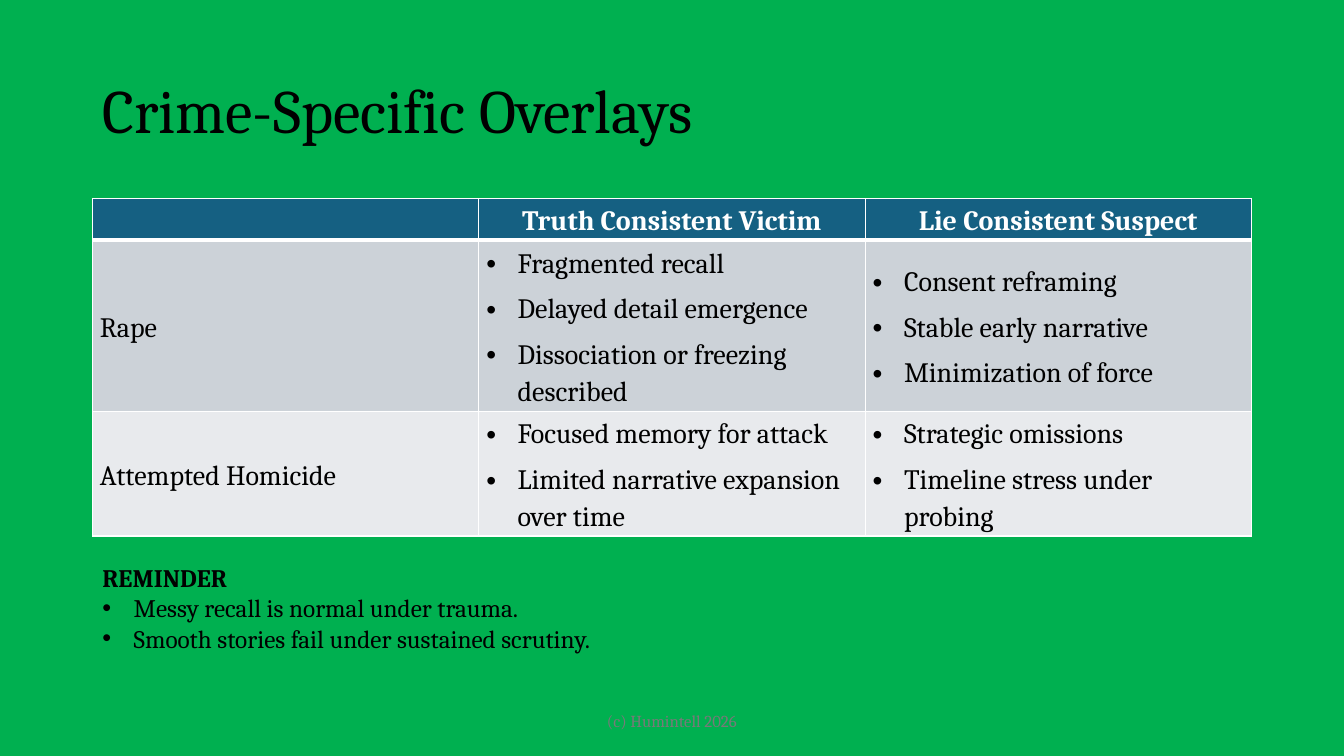
from lxml.etree import SubElement
from pptx import Presentation
from pptx.dml.color import RGBColor
from pptx.enum.text import MSO_ANCHOR, PP_ALIGN
from pptx.oxml import parse_xml
from pptx.oxml.ns import nsdecls, qn
from pptx.util import Cm, Pt

TITLE = "Crime-Specific Overlays"
HEADINGS = ["", "Truth Consistent Victim", "Lie Consistent Suspect"]
CRIMES = [
    ("Rape",
     ["Fragmented recall", "Delayed detail emergence", "Dissociation or freezing described"],
     ["Consent reframing", "Stable early narrative", "Minimization of force"]),
    ("Attempted Homicide",
     ["Focused memory for attack", "Limited narrative expansion over time"],
     ["Strategic omissions", "Timeline stress under probing"]),
]
REMINDER = "REMINDER"
REMINDERS = ["Messy recall is normal under trauma.", "Smooth stories fail under sustained scrutiny."]
COPYRIGHT = "(c) Humintell 2026"

GREEN = RGBColor(0x00, 0xB0, 0x50)
TEAL = RGBColor(0x15, 0x60, 0x82)
BANDS = [RGBColor(0xCC, 0xD2, 0xD8), RGBColor(0xE8, 0xEA, 0xED)]
BLACK = RGBColor(0, 0, 0)
WHITE = RGBColor(0xFF, 0xFF, 0xFF)
GREY = RGBColor(0x79, 0x79, 0x79)

LEFT, WIDTH = Cm(2.33), Cm(29.21)
ROW_HEIGHTS = [Cm(1.05), Cm(4.15), Cm(3.02)]
INDENT = Cm(0.79)


def write(frame, text, size=20, color=BLACK, bold=False, align=PP_ALIGN.LEFT,
          bullet=False, spacing=None, after=None, more=False):
    paragraph = frame.add_paragraph() if more else frame.paragraphs[0]
    paragraph.alignment = align
    paragraph.line_spacing = spacing
    paragraph.space_after = after
    if bullet:
        properties = paragraph._p.get_or_add_pPr()
        properties.set("marL", str(INDENT))
        properties.set("indent", str(-INDENT))
        SubElement(properties, qn("a:buFont")).set("typeface", "Arial")
        SubElement(properties, qn("a:buChar")).set("char", "•")
    if text:
        font = paragraph.add_run().font
        paragraph.runs[0].text = text
    else:
        font = paragraph.font
    font.name, font.size, font.bold = "Cambria", Pt(size), bold
    font.color.rgb = color


def add_frame(slide, left, top, width, height, anchor=MSO_ANCHOR.MIDDLE):
    frame = slide.shapes.add_textbox(left, top, width, height).text_frame
    frame.word_wrap = True
    frame.vertical_anchor = anchor
    return frame


def style_cell(cell, fill, top=1, bottom=1):
    cell.fill.solid()
    cell.fill.fore_color.rgb = fill
    cell.vertical_anchor = MSO_ANCHOR.MIDDLE
    cell.margin_left = cell.margin_right = Cm(0.19)
    cell.margin_top = cell.margin_bottom = 0
    edges = {"L": 1, "R": 1, "T": top, "B": bottom}
    for place, (side, width) in enumerate(edges.items()):
        cell._tc.get_or_add_tcPr().insert(place, parse_xml(
            f'<a:ln{side} {nsdecls("a")} w="{Pt(width)}"><a:solidFill>'
            f'<a:srgbClr val="{WHITE}"/></a:solidFill></a:ln{side}>'))


def add_overlays(slide):
    overlays = slide.shapes.add_table(
        len(CRIMES) + 1, len(HEADINGS), LEFT, Cm(5), WIDTH, sum(ROW_HEIGHTS)).table
    for row, height in zip(overlays.rows, ROW_HEIGHTS):
        row.height = height
    spaced = {"spacing": 1.15, "after": Pt(6)}
    for column, heading in enumerate(HEADINGS):
        cell = overlays.cell(0, column)
        style_cell(cell, TEAL, bottom=3)
        write(cell.text_frame, heading, color=WHITE, bold=True, align=PP_ALIGN.CENTER, **spaced)
    for row, (crime, *signs) in enumerate(CRIMES, 1):
        for column, lines in enumerate([[crime], *signs]):
            cell = overlays.cell(row, column)
            style_cell(cell, BANDS[row - 1], top=3 if row == 1 else 1)
            for place, line in enumerate(lines):
                write(cell.text_frame, line, bullet=column > 0, more=place > 0, **spaced)


def main():
    deck = Presentation()
    deck.slide_width, deck.slide_height = Cm(33.87), Cm(19.05)
    slide = deck.slides.add_slide(deck.slide_layouts[6])
    slide.background.fill.solid()
    slide.background.fill.fore_color.rgb = GREEN

    title = add_frame(slide, LEFT, Cm(1.01), WIDTH, Cm(3.68))
    write(title, TITLE, size=44, spacing=0.9)
    add_overlays(slide)
    copyright_line = add_frame(slide, Cm(11.22), Cm(17.66), Cm(11.43), Cm(1.01))
    write(copyright_line, COPYRIGHT, size=12, color=GREY, align=PP_ALIGN.CENTER)
    reminder = add_frame(slide, LEFT, Cm(14.05), WIDTH, Cm(2.57), MSO_ANCHOR.TOP)
    write(reminder, REMINDER, size=18, bold=True)
    for line in REMINDERS:
        write(reminder, line, size=18, bullet=True, more=True)
    deck.save("out.pptx")


if __name__ == "__main__":
    main()
